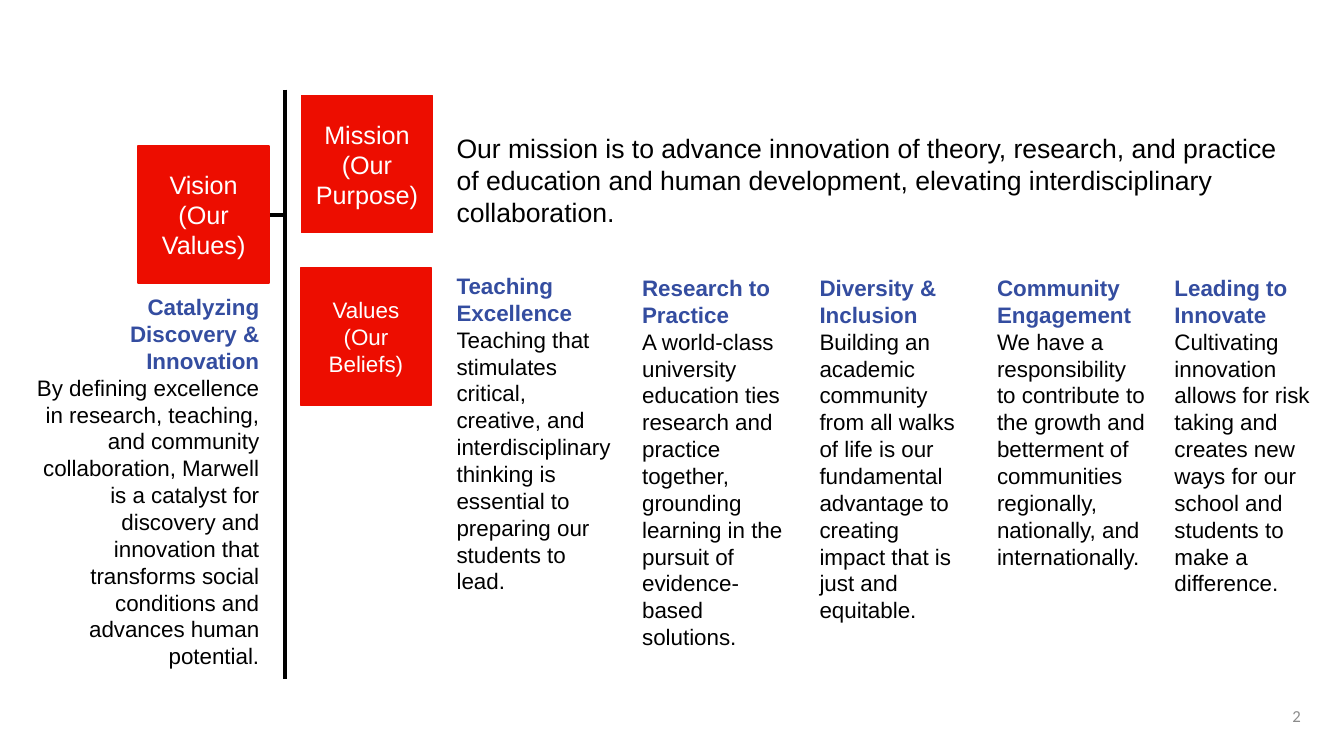
from dataclasses import dataclass

from lxml import etree
from pptx import Presentation
from pptx.dml.color import RGBColor
from pptx.enum import shapes, text
from pptx.oxml import ns
from pptx.util import Inches, Pt


@dataclass(frozen=True)
class Theme:
    """Colours, fonts and type sizes of the slide."""
    red: RGBColor = RGBColor(0xED, 0x0D, 0x00)
    blue: RGBColor = RGBColor(0x34, 0x4D, 0xA0)
    black: RGBColor = RGBColor(0, 0, 0)
    white: RGBColor = RGBColor(255, 255, 255)
    grey: RGBColor = RGBColor(0x8C, 0x8C, 0x8C)
    font: str = "Arial"
    number_font: str = "Calibri"
    body: int = 16
    label: int = 18
    mission: int = 19
    number: int = 12
    rule: int = 3


THEME = Theme()
LEFT, CENTER, RIGHT = text.PP_ALIGN.LEFT, text.PP_ALIGN.CENTER, text.PP_ALIGN.RIGHT

VISION_HEADINGS = ["Catalyzing", "Discovery & Innovation"]
VISION_BODY = ("By defining excellence in research, teaching, and community collaboration, "
               "Marwell is a catalyst for discovery and innovation that transforms social "
               "conditions and advances human potential.")
MISSION = ("Our mission is to advance innovation of theory, research, and practice of education "
           "and human development, elevating interdisciplinary collaboration.")
VALUES = [
    ("Teaching Excellence",
     "Teaching that stimulates critical, creative, and interdisciplinary thinking is essential "
     "to preparing our students to lead."),
    ("Research to Practice",
     "A world-class university education ties research and practice together, grounding "
     "learning in the pursuit of evidence-based solutions."),
    ("Diversity & Inclusion",
     "Building an academic community from all walks of life is our fundamental advantage to "
     "creating impact that is just and equitable."),
    ("Community Engagement",
     "We have a responsibility to contribute to the growth and betterment of communities "
     "regionally, nationally, and internationally."),
    ("Leading to Innovate",
     "Cultivating innovation allows for risk taking and creates new ways for our school and "
     "students to make a difference."),
]


def write(paragraph, words, size, color, bold=False, align=LEFT, font=THEME.font):
    """Fill one paragraph and set its type."""
    paragraph.text = words
    paragraph.alignment = align
    paragraph.font.name = font
    paragraph.font.size = Pt(size)
    paragraph.font.bold = bold
    paragraph.font.color.rgb = color


def add_text_box(slide, left, top, width, height):
    """Add a wrapping text box and return its text frame."""
    frame = slide.shapes.add_textbox(
        Inches(left), Inches(top), Inches(width), Inches(height)).text_frame
    frame.word_wrap = True
    return frame


def add_rule(slide, left, top, right, bottom):
    """Add a thick black line without a shadow."""
    rule = slide.shapes.add_connector(
        shapes.MSO_CONNECTOR.STRAIGHT,
        Inches(left), Inches(top), Inches(right), Inches(bottom))
    rule.line.color.rgb = THEME.black
    rule.line.width = Pt(THEME.rule)
    etree.SubElement(rule._element.spPr, ns.qn("a:effectLst"))


def add_label(slide, left, top, words, size):
    """Add a red label tile."""
    tile = slide.shapes.add_shape(
        shapes.MSO_SHAPE.RECTANGLE, Inches(left), Inches(top), Inches(1.3), Inches(1.36))
    tile.shadow.inherit = False
    tile.fill.solid()
    tile.fill.fore_color.rgb = THEME.red
    tile.line.color.rgb = THEME.red
    tile.line.width = Pt(1)
    frame = tile.text_frame
    frame.word_wrap = True
    frame.vertical_anchor = text.MSO_ANCHOR.MIDDLE
    write(frame.paragraphs[0], words, size, THEME.white, align=CENTER)


def add_statement(slide, left, top, width, height, headings, body, align=LEFT):
    """Add blue headings followed by a body paragraph."""
    frame = add_text_box(slide, left, top, width, height)
    for index, heading in enumerate(headings):
        paragraph = frame.add_paragraph() if index else frame.paragraphs[0]
        write(paragraph, heading, THEME.body, THEME.blue, True, align)
    write(frame.add_paragraph(), body, THEME.body, THEME.black, align=align)


def add_vision(slide, left, top):
    """Place the vision tile, its link to the divider and its statement."""
    add_rule(slide, left + 2.13, top + 0.68, left + 2.6, top + 0.68)
    add_label(slide, left + 1.14, top, "Vision (Our Values)", THEME.label)
    add_statement(slide, left, top + 1.41, 2.44, 3.87, VISION_HEADINGS, VISION_BODY, RIGHT)


def add_mission(slide, left, top):
    """Place the mission tile and its statement."""
    add_label(slide, left, top, "Mission (Our Purpose)", THEME.label)
    frame = add_text_box(slide, left + 1.44, top + 0.31, 8.42, 1.06)
    write(frame.paragraphs[0], MISSION, THEME.mission, THEME.black)


def add_values(slide, left, top):
    """Place the values tile and one column for each value."""
    add_label(slide, left, top, "Values (Our Beliefs)", THEME.body)
    first, *others = VALUES
    add_statement(slide, left + 1.45, top - 0.01, 1.75, 3.33, [first[0]], first[1])
    for index, (heading, body) in enumerate(others):
        add_statement(slide, left + 3.29 + 1.76 * index, top + 0.01, 1.68, 3.6, [heading], body)


def add_page_number(slide, left, top):
    """Place the page number."""
    frame = add_text_box(slide, left, top, 3, 0.4)
    frame.vertical_anchor = text.MSO_ANCHOR.MIDDLE
    write(frame.paragraphs[0], "2", THEME.number, THEME.grey, align=RIGHT,
          font=THEME.number_font)


def main():
    """Build and save the presentation."""
    presentation = Presentation()
    presentation.slide_width = Inches(13.33)
    presentation.slide_height = Inches(7.5)
    slide = presentation.slides.add_slide(presentation.slide_layouts[6])
    add_vision(slide, 0.23, 1.45)
    add_rule(slide, 2.83, 0.89, 2.83, 6.74)
    add_mission(slide, 2.99, 0.95)
    add_values(slide, 2.98, 2.66)
    add_page_number(slide, 10, 6.9)
    presentation.save("out.pptx")


if __name__ == "__main__":
    main()
